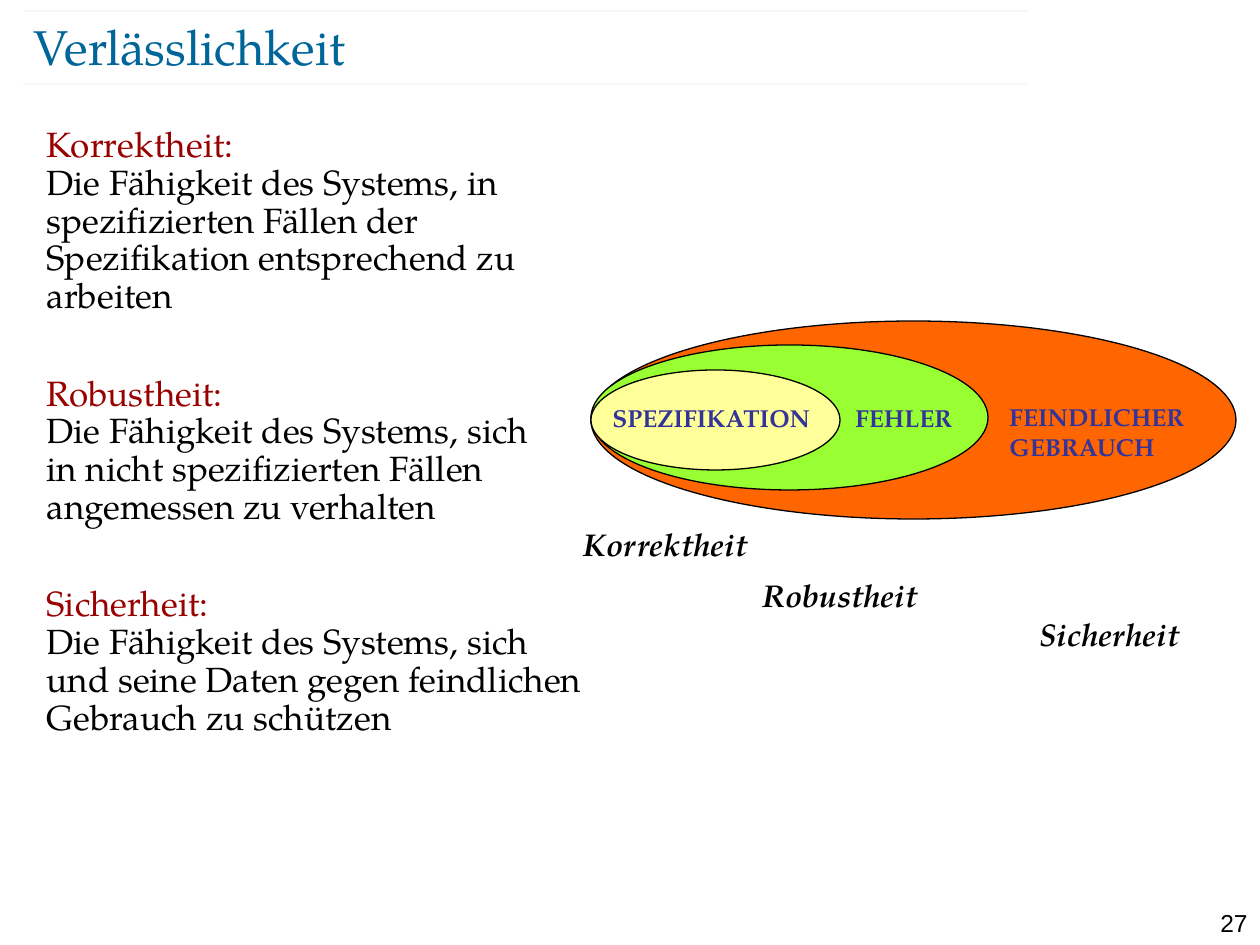
from dataclasses import dataclass

from pptx import Presentation
from pptx.dml.color import RGBColor
from pptx.enum.shapes import MSO_CONNECTOR, MSO_SHAPE
from pptx.enum.text import MSO_ANCHOR, MSO_AUTO_SIZE, PP_ALIGN
from pptx.oxml.ns import qn
from pptx.util import Emu, Pt
from lxml import etree

LINE = MSO_CONNECTOR.STRAIGHT
OVAL = MSO_SHAPE.OVAL
TOP, MID = MSO_ANCHOR.TOP, MSO_ANCHOR.MIDDLE
LEFT, RIGHT = PP_ALIGN.LEFT, PP_ALIGN.RIGHT
FIXED = MSO_AUTO_SIZE.NONE


@dataclass(frozen=True)
class Theme:
    serif: str = "TeX Gyre Pagella"
    sans: str = "Arial"
    blue: str = "006699"
    red: str = "990000"
    ink: str = "000000"
    navy: str = "333399"
    rings: tuple = ("FF6600", "99FF33", "FFFF99")
    head: int = 28
    text: int = 20
    tag: int = 18
    small: int = 14


THEME = Theme()
TERMS = [
    ("Korrektheit:", ["Die Fähigkeit des Systems, in spezifizierten Fällen der "
                      "Spezifikation entsprechend zu arbeiten"]),
    ("Robustheit:", ["Die Fähigkeit des Systems, sich",
                     "in nicht spezifizierten Fällen angemessen zu verhalten"]),
    ("Sicherheit:", ["Die Fähigkeit des Systems, sich und seine Daten gegen "
                     "feindlichen Gebrauch zu schützen"]),
]
RINGS = [
    ((0, 0, 645, 198), "FEINDLICHER GEBRAUCH", (406, 75, 218, 72)),
    ((0, 24, 397, 145), "FEHLER", (252, 76, 139, 42)),
    ((0, 49, 249, 100), "SPEZIFIKATION", (9, 76, 234, 42)),
]
TAGS = [("Korrektheit", 0, 0), ("Robustheit", 179, 51), ("Sicherheit", 456, 90)]


def px(num):
    return Emu(round(num * 914400 / 126))


def rgb(code):
    return RGBColor.from_string(code)


def shift(box, part):
    return box[0] + part[0], box[1] + part[1], part[2], part[3]


def apply(item, form):
    for key, value in form.items():
        setattr(item, key, value)


def place(shape, box):
    apply(shape, dict(zip(("left", "top", "width", "height"), map(px, box))))


def write(para, text, size, color, **form):
    run = para.add_run()
    run.text = text
    apply(run.font, {"name": THEME.serif, "size": Pt(size), **form})
    run.font.color.rgb = rgb(color)


def label(slide, box, text, size, color, align=LEFT, **form):
    frame = slide.shapes.add_textbox(*map(px, box)).text_frame
    apply(frame, {"word_wrap": True, "auto_size": FIXED})
    para = frame.paragraphs[0]
    para.alignment = align
    write(para, text, size, color, **form)


def rule(slide, box):
    x, y, wide, high = box
    line = slide.shapes.add_connector(LINE, *map(px, (x, y, x + wide, y + high)))
    line.line.width = Pt(0.1)
    line.line.color.rgb = rgb(THEME.blue)
    props = line._element.spPr
    tint = next(props.iter(qn("a:srgbClr")))
    etree.SubElement(tint, qn("a:alpha"), val="35000")
    etree.SubElement(props, qn("a:effectLst"))


def title(slide, box):
    shape = slide.shapes.title
    place(shape, box)
    frame = shape.text_frame
    sides = ("left", "top", "right", "bottom")
    apply(frame, {f"margin_{side}": 0 for side in sides})
    apply(frame, {"vertical_anchor": MID, "auto_size": FIXED, "word_wrap": True})
    para = frame.paragraphs[0]
    para.alignment = LEFT
    write(para, "Verlässlichkeit", THEME.head, THEME.blue)


def body(slide, box):
    shape = slide.placeholders[1]
    place(shape, box)
    frame = shape.text_frame
    apply(frame, {"vertical_anchor": TOP, "auto_size": FIXED, "word_wrap": True})
    for num, (term, lines) in enumerate(TERMS):
        para = frame.add_paragraph() if num else frame.paragraphs[0]
        props = para._p.get_or_add_pPr()
        for key in ("marL", "indent"):
            props.set(key, "0")
        etree.SubElement(props, qn("a:buNone"))
        apply(para, {"alignment": LEFT, "line_spacing": 0.9,
                     "space_before": Pt(34 if num else 0)})
        write(para, term, THEME.text, THEME.red)
        for line in lines:
            para.add_line_break()
            write(para, line, THEME.text, THEME.ink)


def rings(slide, box):
    for (part, text, spot), fill in zip(RINGS, THEME.rings):
        oval = slide.shapes.add_shape(OVAL, *map(px, shift(box, part)))
        oval.shadow.inherit = False
        oval.fill.solid()
        oval.fill.fore_color.rgb = rgb(fill)
        oval.line.color.rgb = rgb(THEME.ink)
        oval.line.width = Pt(0.75)
        label(slide, shift(box, spot), text, THEME.small, THEME.navy, bold=True)


def tags(slide, box):
    for text, x, y in TAGS:
        label(slide, shift(box, (x, y, 208, 50)), text, THEME.tag, THEME.ink,
              bold=True, italic=True)


def main():
    deck = Presentation()
    apply(deck, {"slide_width": px(1260), "slide_height": px(945)})
    slide = deck.slides.add_slide(deck.slide_layouts[1])
    rule(slide, (23, 84, 1004, 0))
    rule(slide, (25, 11, 1004, 0))
    title(slide, (34, 16, 1095, 60))
    body(slide, (34, 121, 561, 777))
    tags(slide, (571, 519, 664, 140))
    rings(slide, (591, 321, 645, 198))
    label(slide, (1191, 902, 69, 30), "27", THEME.small, THEME.ink, RIGHT,
          name=THEME.sans)
    deck.save("out.pptx")


if __name__ == "__main__":
    main()
